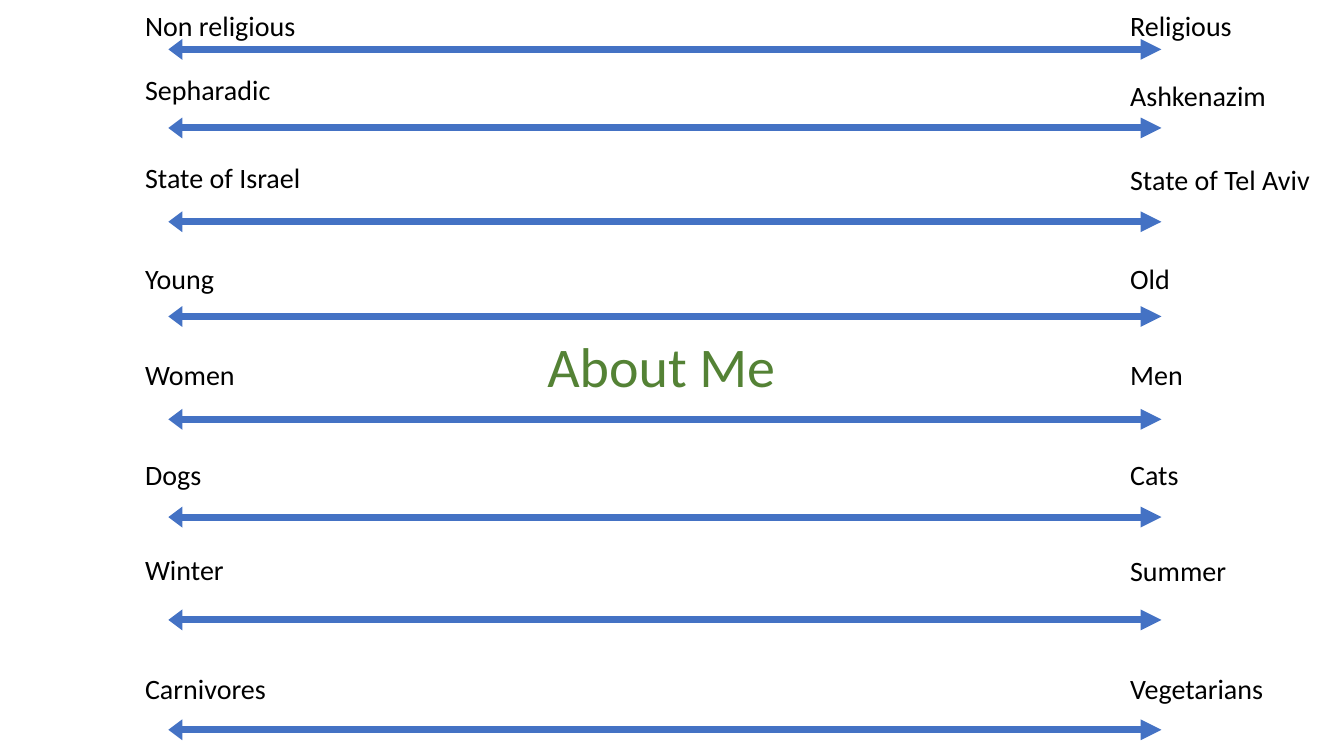
"""Build the About Me slide of eight opposing scales."""
from dataclasses import dataclass

from lxml import etree
from pptx import Presentation
from pptx.dml.color import RGBColor
from pptx.enum import shapes, text
from pptx.oxml import ns
from pptx.util import Inches, Pt


@dataclass(frozen=True)
class Theme:
    """Colours, font and type sizes."""
    font: str = "Calibri"
    ink: str = "000000"
    blue: str = "4472C4"
    green: str = "548235"
    label: int = 20
    title: int = 40
    line: int = 5


class Board:
    """A slide with its style."""

    def __init__(self, slide, theme):
        """Keep the slide and theme."""
        self.slide = slide
        self.theme = theme

    def label(self, home, words, left, top, width, height, size, color):
        """Add a line of text."""
        box = home.add_textbox(*map(Inches, (left, top, width, height)))
        frame = box.text_frame
        frame.word_wrap = True
        frame.auto_size = text.MSO_AUTO_SIZE.SHAPE_TO_FIT_TEXT
        para = frame.paragraphs[0]
        para.text = words
        para.font.name = self.theme.font
        para.font.size = Pt(size)
        para.font.color.rgb = RGBColor.from_string(color)

    def arrow(self, home, left, right, y):
        """Add a level arrow with two heads."""
        line = home.add_connector(
            shapes.MSO_CONNECTOR.STRAIGHT,
            Inches(left), Inches(y), Inches(right), Inches(y))
        line.line.color.rgb = RGBColor.from_string(self.theme.blue)
        line.line.width = Pt(self.theme.line)
        edge = line.line._get_or_add_ln()
        for tag, size in (("a:headEnd", "sm"), ("a:tailEnd", "med")):
            etree.SubElement(edge, ns.qn(tag), type="triangle", w="med", len=size)
        etree.SubElement(line._element.spPr, ns.qn("a:effectLst"))

    def scale(self, y, left, right):
        """Add an arrow with a label at each end."""
        home = self.slide.shapes.add_group_shape().shapes
        self.arrow(home, 1.67, 11.52, y)
        for x, (words, top) in ((1.34, left), (11.11, right)):
            self.label(home, words, x, top, 2.19, 0.44,
                       self.theme.label, self.theme.ink)

    def title(self, words):
        """Add the heading."""
        self.label(self.slide.shapes, words, 5.33, 3.24, 3.78, 0.77,
                   self.theme.title, self.theme.green)


SCALES = (
    (0.49, ("Non religious", 0.04), ("Religious", 0.04)),
    (1.27, ("Sepharadic", 0.67), ("Ashkenazim", 0.73)),
    (2.2, ("State of Israel", 1.54), ("State of Tel Aviv", 1.56)),
    (3.14, ("Young", 2.55), ("Old", 2.55)),
    (4.16, ("Women", 3.5), ("Men", 3.5)),
    (5.13, ("Dogs", 4.49), ("Cats", 4.49)),
    (6.15, ("Winter", 5.43), ("Summer", 5.44)),
    (7.24, ("Carnivores", 6.61), ("Vegetarians", 6.61)),
)


def main():
    """Build and save the deck."""
    deck = Presentation()
    deck.slide_width = Inches(13.33)
    deck.slide_height = Inches(7.5)
    board = Board(deck.slides.add_slide(deck.slide_layouts[6]), Theme())
    for row in SCALES:
        board.scale(*row)
    board.title("About Me")
    deck.save("out.pptx")


if __name__ == "__main__":
    main()
